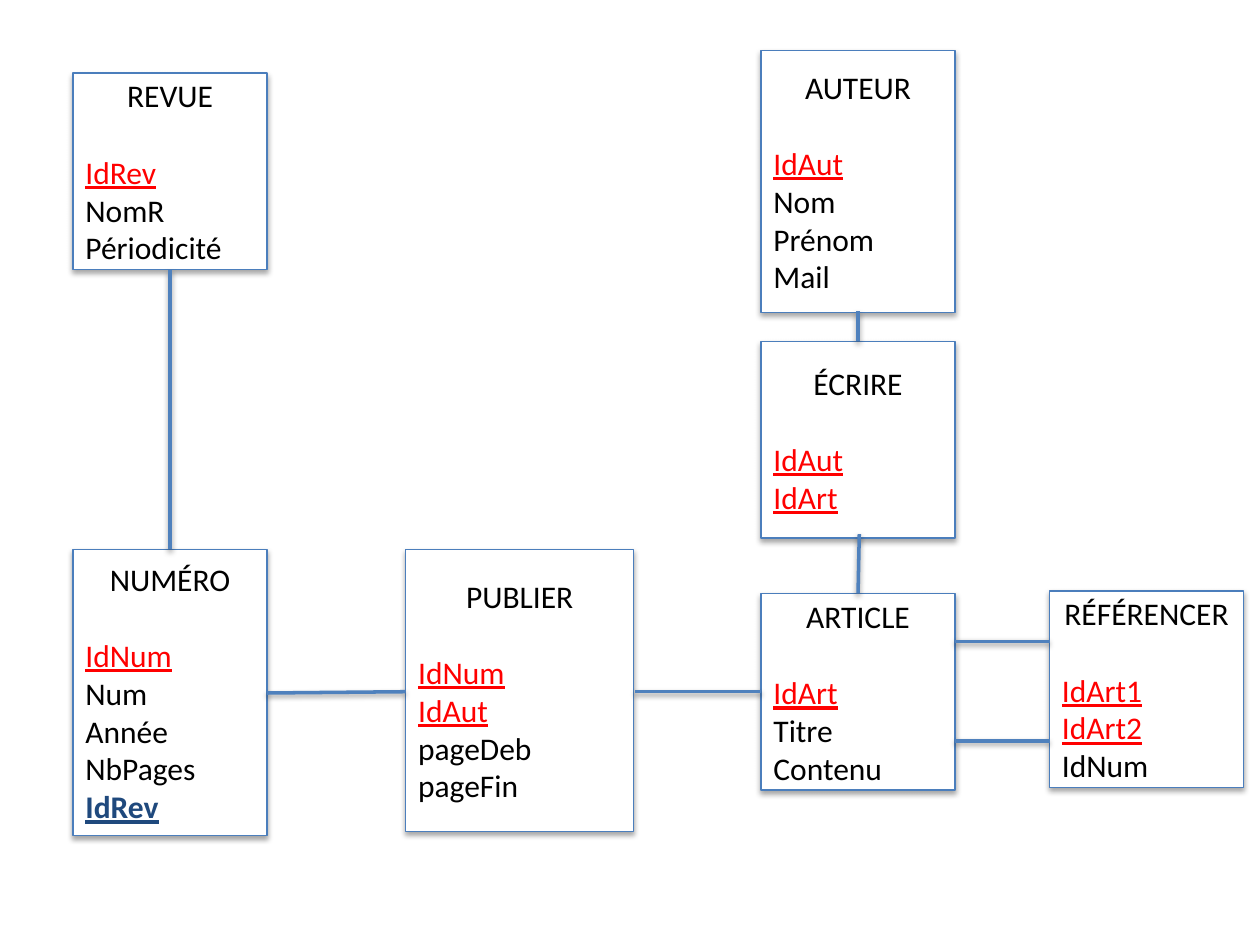
import pptx
import pptx.dml.color
import pptx.enum.shapes
import pptx.enum.text
import pptx.oxml
import pptx.oxml.ns
import pptx.util

Inches = pptx.util.Inches
Pt = pptx.util.Pt
RGBColor = pptx.dml.color.RGBColor
ALIGN = pptx.enum.text.PP_ALIGN

BLACK = RGBColor(0x00, 0x00, 0x00)
WHITE = RGBColor(0xFF, 0xFF, 0xFF)
KEY_RED = RGBColor(0xFF, 0x00, 0x00)
FOREIGN_BLUE = RGBColor(0x1F, 0x49, 0x7D)
BORDER_BLUE = RGBColor(0x4B, 0x7E, 0xBC)
LINK_BLUE = RGBColor(0x4F, 0x81, 0xBD)

# Formats of the attributes of an entity
KEY = dict(color=KEY_RED, underline=True)
FOREIGN = dict(color=FOREIGN_BLUE, underline=True, bold=True)
PLAIN = {}

# Shared grid
BOX_W, BOX_H = 1.54, 1.56
LEFT_X, PUBLISH_X, AUTHOR_X, REFER_X = 0.58, 3.22, 6.04, 8.33
LOWER_Y = 4.36
LEFT_MID, AUTHOR_MID = LEFT_X + BOX_W / 2, AUTHOR_X + BOX_W / 2

# Name, left, top, width, height, attributes
ENTITIES = [
    ("REVUE", LEFT_X, 0.58, BOX_W, BOX_H,
     [("IdRev", KEY), ("NomR", PLAIN), ("Périodicité", PLAIN)]),
    ("NUMÉRO", LEFT_X, LOWER_Y, BOX_W, 2.27,
     [("IdNum", KEY), ("Num", PLAIN), ("Année", PLAIN),
      ("NbPages", PLAIN), ("IdRev", FOREIGN)]),
    ("ARTICLE", AUTHOR_X, 4.71, BOX_W, BOX_H,
     [("IdArt", KEY), ("Titre", PLAIN), ("Contenu", PLAIN)]),
    ("AUTEUR", AUTHOR_X, 0.4, BOX_W, 2.08,
     [("IdAut", KEY), ("Nom", PLAIN), ("Prénom", PLAIN), ("Mail", PLAIN)]),
    ("PUBLIER", PUBLISH_X, LOWER_Y, 1.81, 2.24,
     [("IdNum", KEY), ("IdAut", KEY), ("pageDeb", PLAIN), ("pageFin", PLAIN)]),
    ("RÉFÉRENCER", REFER_X, 4.69, BOX_W, BOX_H,
     [("IdArt1", KEY), ("IdArt2", KEY), ("IdNum", PLAIN)]),
    ("ÉCRIRE", AUTHOR_X, 2.71, BOX_W, BOX_H,
     [("IdAut", KEY), ("IdArt", KEY)]),
]

# Start x, start y, end x, end y
LINKS = [
    (LEFT_MID, LOWER_Y, LEFT_MID, 2.14),
    (PUBLISH_X, 5.49, LEFT_X + BOX_W, 5.5),
    (AUTHOR_X, 5.49, 5.04, 5.49),
    (AUTHOR_MID, 2.71, AUTHOR_MID, 2.47),
    (AUTHOR_MID, 4.71, 6.82, 4.24),
    (REFER_X, 5.09, AUTHOR_X + BOX_W, 5.09),
    (REFER_X, 5.88, AUTHOR_X + BOX_W, 5.88),
]


def add_shadow(element, distance, opacity):
    """Give a shape or connector a soft shadow falling straight down."""
    properties = element._element.spPr
    for effects in properties.findall(pptx.oxml.ns.qn("a:effectLst")):
        properties.remove(effects)
    properties.append(pptx.oxml.parse_xml(
        f'<a:effectLst {pptx.oxml.ns.nsdecls("a")}>'
        f'<a:outerShdw blurRad="{Pt(3.1)}" dist="{Pt(distance)}"'
        ' dir="5400000" rotWithShape="0"><a:srgbClr val="000000">'
        f'<a:alpha val="{opacity * 1000}"/></a:srgbClr></a:outerShdw>'
        '</a:effectLst>'))


def write_line(paragraph, text, color=BLACK, bold=False, underline=False,
               align=ALIGN.LEFT, space_after=0):
    paragraph.alignment = align
    paragraph.space_after = Pt(space_after)
    run = paragraph.add_run()
    run.text = text
    run.font.name = "Calibri"
    run.font.size = Pt(18)
    run.font.bold = bold
    run.font.underline = underline
    run.font.color.rgb = color


def add_entity(slide, name, left, top, width, height, attributes):
    entity = slide.shapes.add_shape(
        pptx.enum.shapes.MSO_SHAPE.RECTANGLE,
        Inches(left), Inches(top), Inches(width), Inches(height))
    entity.fill.solid()
    entity.fill.fore_color.rgb = WHITE
    entity.line.color.rgb = BORDER_BLUE
    entity.line.width = Pt(0.75)
    add_shadow(entity, distance=1.8, opacity=35)

    frame = entity.text_frame
    frame.word_wrap = True
    frame.vertical_anchor = pptx.enum.text.MSO_ANCHOR.MIDDLE
    write_line(frame.paragraphs[0], name, align=ALIGN.CENTER, space_after=22)
    for attribute, style in attributes:
        write_line(frame.add_paragraph(), attribute, **style)


def add_link(slide, *ends):
    link = slide.shapes.add_connector(
        pptx.enum.shapes.MSO_CONNECTOR.STRAIGHT, *map(Inches, ends))
    link.line.color.rgb = LINK_BLUE
    link.line.width = Pt(2)
    add_shadow(link, distance=1.6, opacity=38)


def main():
    deck = pptx.Presentation()
    deck.slide_width, deck.slide_height = Inches(10), Inches(7.5)
    slide = deck.slides.add_slide(deck.slide_layouts[6])

    # Entities, then the links between them
    for entity in ENTITIES:
        add_entity(slide, *entity)
    for link in LINKS:
        add_link(slide, *link)

    deck.save("out.pptx")


if __name__ == "__main__":
    main()
